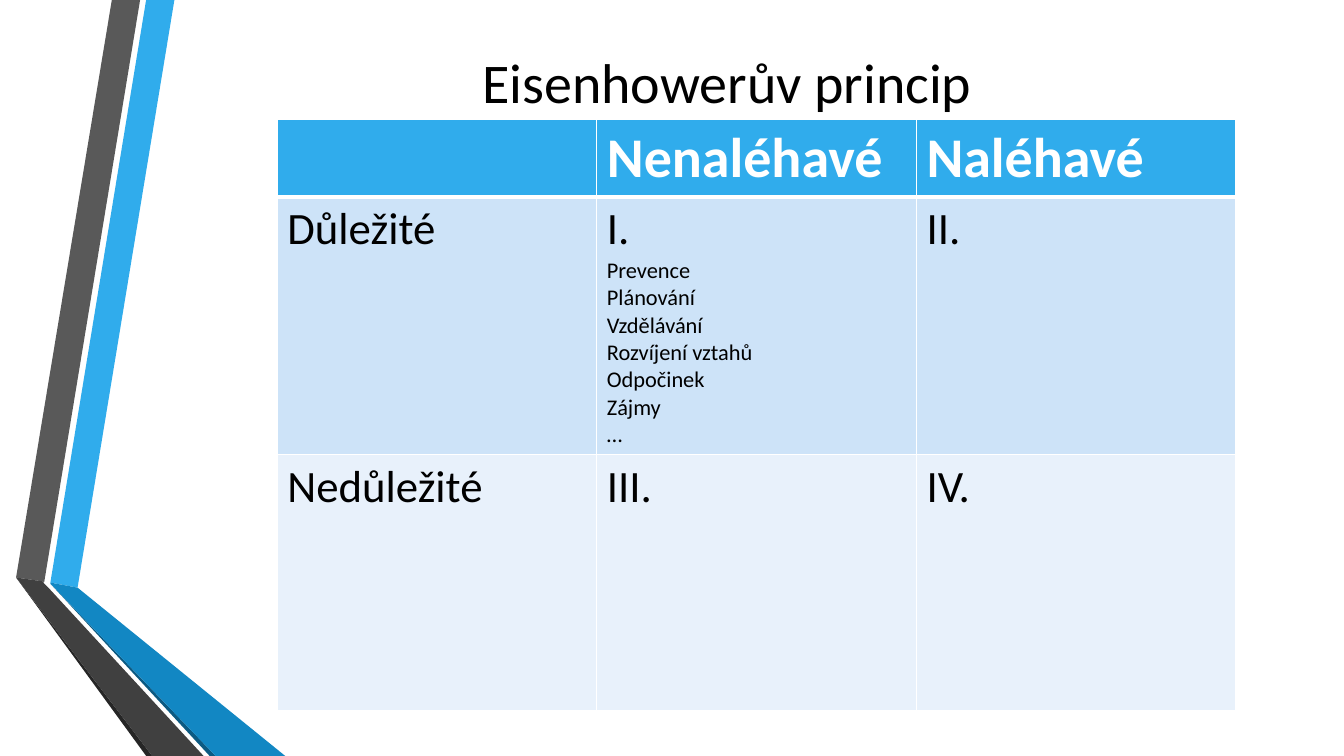
from lxml import etree
from pptx import Presentation
from pptx.dml.color import RGBColor
from pptx.enum.text import MSO_ANCHOR, PP_ALIGN
from pptx.oxml.ns import qn
from pptx.util import Pt

EMU_PER_PX = 9144  # 100 px to the inch
CENTER = PP_ALIGN.CENTER
MIDDLE = MSO_ANCHOR.MIDDLE
FONT = "Calibri"
BLACK, WHITE = "000000", "FFFFFF"

RIBBONS = [
    ("30ACEC", [(50, 578), (77, 583), (173, 0), (145, 0)]),
    ("595959", [(139, 0), (111, 0), (16, 573), (44, 577)]),
    ("262626", [(16, 573), (145, 750), (151, 750)]),
    ("0C5A82", [(50, 579), (208, 750), (214, 750)]),
    ("1287C3", [(50, 579), (214, 750), (283, 750), (77, 583), (50, 578)]),
    ("404040", [(202, 750), (48, 583), (43, 578), (44, 577), (16, 573), (151, 750)]),
]

ROW_FILLS = ["30ACEC", "CDE3F8", "E8F1FB"]
ROW_HEIGHTS = [77, 255, 254]
COLUMN_WIDTH = 317
ACTIVITIES = ["Prevence", "Plánování", "Vzdělávání", "Rozvíjení vztahů",
              "Odpočinek", "Zájmy", "…"]
MATRIX = [
    [[], ["Nenaléhavé"], ["Naléhavé"]],
    [["Důležité"], ["I.", *ACTIVITIES], ["II."]],
    [["Nedůležité"], ["III."], ["IV."]],
]


def px(length):
    return length * EMU_PER_PX


def color(hex_string):
    return RGBColor.from_string(hex_string)


def add_run(paragraph, text, size, text_color, bold=False):
    run = paragraph.add_run()
    run.text = text
    run.font.name = FONT
    run.font.size = Pt(size)
    run.font.bold = bold
    run.font.color.rgb = color(text_color)


def add_ribbon(slide, fill, points):
    builder = slide.shapes.build_freeform(*points[0], scale=EMU_PER_PX)
    builder.add_line_segments(points[1:], close=True)
    shape = builder.convert_to_shape()
    shape.shadow.inherit = False
    shape.fill.solid()
    shape.fill.fore_color.rgb = color(fill)
    shape.line.fill.background()


def set_title(slide, text):
    title = slide.shapes.title
    title.left, title.top, title.width, title.height = map(px, (173, 22, 1096, 116))
    title.text_frame.vertical_anchor = MIDDLE
    paragraph = title.text_frame.paragraphs[0]
    paragraph.alignment = CENTER
    add_run(paragraph, text, 40, BLACK)


def set_borders(cell, widths):
    """Give the cell white borders; widths maps each side tag to points."""
    properties = cell._tc.get_or_add_tcPr()
    for side, width in widths.items():
        line = etree.SubElement(properties, qn(f"a:{side}"), w=str(Pt(width)))
        fill = etree.SubElement(line, qn("a:solidFill"))
        etree.SubElement(fill, qn("a:srgbClr"), val=WHITE)


def fill_cell(cell, lines, row):
    is_header = row == 0
    top = 3 if row == 1 else 1
    bottom = 3 if is_header else 1
    set_borders(cell, {"lnL": 1, "lnR": 1, "lnT": top, "lnB": bottom})
    cell.fill.solid()
    cell.fill.fore_color.rgb = color(ROW_FILLS[row])
    for index, text in enumerate(lines):
        frame = cell.text_frame
        paragraph = frame.add_paragraph() if index else frame.paragraphs[0]
        if is_header:
            add_run(paragraph, text, 40, WHITE, bold=True)
        else:
            add_run(paragraph, text, 16 if index else 32, BLACK)


def add_matrix(slide):
    columns = len(MATRIX[0])
    frame = slide.shapes.add_table(
        len(MATRIX), columns, px(275), px(118),
        px(COLUMN_WIDTH * columns), px(sum(ROW_HEIGHTS)))
    table = frame.table
    for column in table.columns:
        column.width = px(COLUMN_WIDTH)
    for row, cells in enumerate(MATRIX):
        table.rows[row].height = px(ROW_HEIGHTS[row])
        for column, lines in enumerate(cells):
            fill_cell(table.cell(row, column), lines, row)


def main():
    presentation = Presentation()
    presentation.slide_width = px(1333)
    presentation.slide_height = px(750)
    title_only = presentation.slide_layouts[5]
    slide = presentation.slides.add_slide(title_only)
    for fill, points in RIBBONS:
        add_ribbon(slide, fill, points)
    set_title(slide, "Eisenhowerův princip")
    add_matrix(slide)
    presentation.save("out.pptx")


if __name__ == "__main__":
    main()
